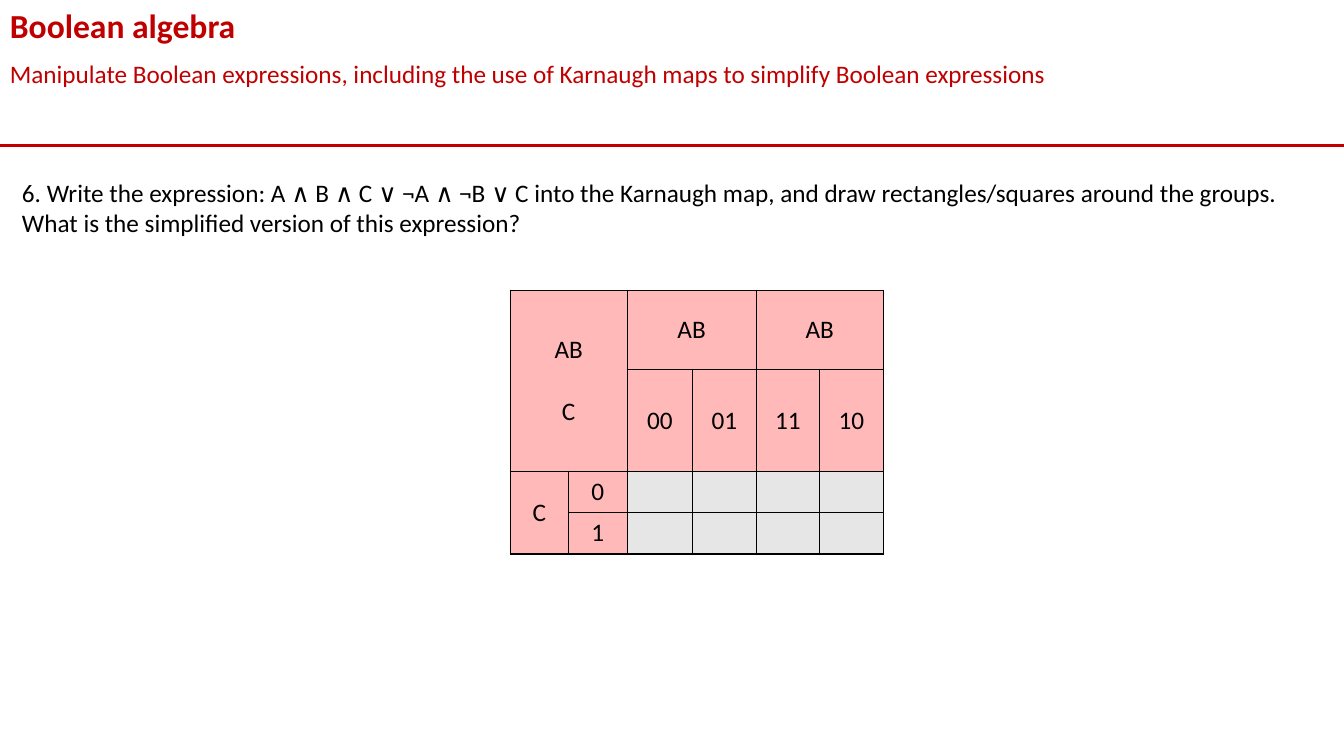
from dataclasses import dataclass

from lxml.etree import SubElement
from pptx import Presentation
from pptx.dml.color import RGBColor
from pptx.enum.shapes import MSO_CONNECTOR
from pptx.enum.text import MSO_ANCHOR, PP_ALIGN
from pptx.oxml.ns import qn
from pptx.util import Inches, Pt


@dataclass(frozen=True)
class Theme:
    font: str = "Calibri"
    accent: str = "C00000"
    ink: str = "000000"
    header_fill: str = "FFB9B9"
    cell_fill: str = "E7E6E6"
    title_size: int = 24
    body_size: int = 18
    rule_width: float = 2.25
    border_width: int = 1


THEME = Theme()
WIDTH, HEIGHT = 13.33, 7.5

COLUMNS = [0.58, 0.58, 0.65, 0.63, 0.63, 0.63]
ROWS = [0.79, 0.4, 0.41, 0.41]
MERGES = [(0, 0, 1, 1), (0, 2, 0, 3), (0, 4, 0, 5), (2, 0, 3, 0)]
LABELS = [
    ["AB\nC", "", "AB", "", "AB", ""],
    ["", "", "00", "01", "11", "10"],
    ["C", "0", "", "", "", ""],
    ["", "1", "", "", "", ""],
]


def write(tf, text, size, color, bold=False, align=None, gap=0):
    tf.text = text
    for i, p in enumerate(tf.paragraphs):
        p.alignment = align
        if i and gap:
            p.space_before = Pt(gap)
        for r in p.runs:
            r.font.name = THEME.font
            r.font.size = Pt(size)
            r.font.bold = bold
            r.font.color.rgb = RGBColor.from_string(color)


def add_text(s, box, text, size, color, bold=False):
    sp = s.shapes.add_textbox(*map(Inches, box))
    sp.text_frame.word_wrap = True
    write(sp.text_frame, text, size, color, bold)


def add_header(s, box):
    left, top, width, height = box
    bottom = top + height
    rule = s.shapes.add_connector(
        MSO_CONNECTOR.STRAIGHT,
        *map(Inches, (left, bottom, left + width, bottom)))
    rule.line.color.rgb = RGBColor.from_string(THEME.accent)
    rule.line.width = Pt(THEME.rule_width)
    SubElement(rule._element.spPr, qn("a:effectLst"))
    add_text(s, (left, top + 0.53, width, 0.4),
             "Manipulate Boolean expressions, including the use of Karnaugh "
             "maps to simplify Boolean expressions",
             THEME.body_size, THEME.accent)
    add_text(s, (left, top, width, 0.5), "Boolean algebra",
             THEME.title_size, THEME.accent, bold=True)


def add_question(s, box):
    add_text(s, box,
             "6. Write the expression: A ∧ B ∧ C ∨ ¬A ∧ ¬B ∨ C into the "
             "Karnaugh map, and draw rectangles/squares around the groups.\n"
             "What is the simplified version of this expression?",
             THEME.body_size, THEME.ink)


def add_borders(cell):
    tcPr = cell._tc.get_or_add_tcPr()
    for i, side in enumerate(("lnL", "lnR", "lnT", "lnB")):
        ln = tcPr.makeelement(qn(f"a:{side}"),
                              {"w": str(Pt(THEME.border_width))})
        fill = SubElement(ln, qn("a:solidFill"))
        SubElement(fill, qn("a:srgbClr"), val=THEME.ink)
        tcPr.insert(i, ln)


def add_karnaugh_map(s, box):
    table = s.shapes.add_table(len(ROWS), len(COLUMNS),
                               *map(Inches, box)).table
    for column, width in zip(table.columns, COLUMNS):
        column.width = Inches(width)
    for row, height in zip(table.rows, ROWS):
        row.height = Inches(height)
    for top, left, bottom, right in MERGES:
        table.cell(top, left).merge(table.cell(bottom, right))
    for i, labels in enumerate(LABELS):
        for j, label in enumerate(labels):
            cell = table.cell(i, j)
            is_header = i < 2 or j < 2
            cell.fill.solid()
            cell.fill.fore_color.rgb = RGBColor.from_string(
                THEME.header_fill if is_header else THEME.cell_fill)
            cell.vertical_anchor = MSO_ANCHOR.MIDDLE
            add_borders(cell)
            write(cell.text_frame, label, THEME.body_size, THEME.ink,
                  align=PP_ALIGN.CENTER, gap=22)


def main():
    prs = Presentation()
    prs.slide_width, prs.slide_height = Inches(WIDTH), Inches(HEIGHT)
    s = prs.slides.add_slide(prs.slide_layouts[6])
    add_header(s, (0, 0, WIDTH, 1.44))
    add_question(s, (0.12, 1.71, 13.07, 0.71))
    add_karnaugh_map(s, (5.06, 2.88, sum(COLUMNS), sum(ROWS)))
    prs.save("out.pptx")


if __name__ == "__main__":
    main()
